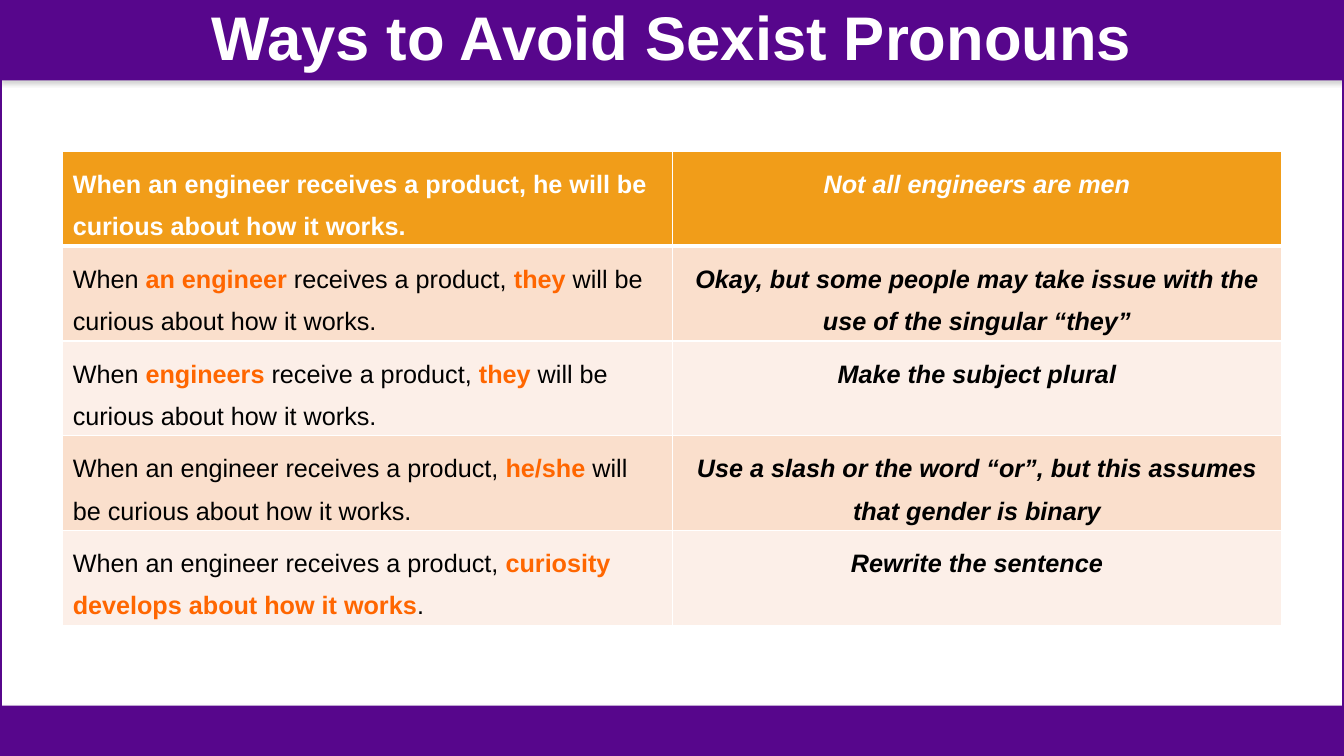
from lxml import etree
from pptx import Presentation
from pptx.dml.color import RGBColor
from pptx.enum.shapes import MSO_SHAPE
from pptx.enum.text import MSO_ANCHOR, PP_ALIGN
from pptx.oxml import parse_xml
from pptx.oxml.ns import nsdecls, qn
from pptx.util import Cm, Pt

RECTANGLE = MSO_SHAPE.RECTANGLE
MIDDLE = MSO_ANCHOR.MIDDLE
LEFT, CENTER = PP_ALIGN.LEFT, PP_ALIGN.CENTER

WIDTH, HEIGHT = 33.87, 19.05
BAND_HEIGHT = 2.03
FOOTER_HEIGHT = 1.27
TITLE_ONLY = 5

# Asterisks enclose the highlighted words.
ADVICE = [
    ("When an engineer receives a product, he will be curious about how it works.",
     "Not all engineers are men"),
    ("When *an engineer* receives a product, *they* will be curious about how it works.",
     "Okay, but some people may take issue with the use of the singular “they”"),
    ("When *engineers* receive a product, *they* will be curious about how it works.",
     "Make the subject plural"),
    ("When an engineer receives a product, *he/she* will be curious about how it works.",
     "Use a slash or the word “or”, but this assumes that gender is binary"),
    ("When an engineer receives a product, *curiosity develops about how it works*.",
     "Rewrite the sentence"),
]


def color(hex_code):
    return RGBColor.from_string(hex_code)


class Deck:
    FONT = "Arial"
    PURPLE, ORANGE, ACCENT = "57068C", "F19D19", "FF6600"
    BANDS = ("FCEFE8", "FADFCC")
    WHITE, BLACK = "FFFFFF", "000000"

    def __init__(self):
        self.presentation = Presentation()
        self.presentation.slide_width = Cm(WIDTH)
        self.presentation.slide_height = Cm(HEIGHT)
        layout = self.presentation.slide_layouts[TITLE_ONLY]
        self.slide = self.presentation.slides.add_slide(layout)

    def rectangle(self, top, height):
        box = self.slide.shapes.add_shape(RECTANGLE, 0, Cm(top), Cm(WIDTH), Cm(height))
        box.shadow.inherit = False
        return box

    def bar(self, top, height):
        """Add a full-width purple bar with a soft shadow below it."""
        bar = self.rectangle(top, height)
        bar.fill.solid()
        bar.fill.fore_color.rgb = color(self.PURPLE)
        bar.line.fill.background()
        effects = bar._element.spPr.find(qn("a:effectLst"))
        shadow = etree.SubElement(effects, qn("a:outerShdw"), blurRad=str(Pt(3.1)),
                                  dist=str(Pt(1.8)), dir="5400000", rotWithShape="0")
        tint = etree.SubElement(shadow, qn("a:srgbClr"), val="808080")
        etree.SubElement(tint, qn("a:alpha"), val="35000")

    def frame(self):
        frame = self.rectangle(0, HEIGHT)
        frame.fill.background()
        frame.line.color.rgb = color(self.PURPLE)
        frame.line.width = Pt(2.25)

    def run(self, paragraph, text, size, hex_code, bold=False, italic=False):
        run = paragraph.add_run()
        run.text = text
        run.font.name = self.FONT
        run.font.size = Pt(size)
        run.font.bold = bold
        run.font.italic = italic
        run.font.color.rgb = color(hex_code)

    def title(self, text):
        title = self.slide.shapes.title
        title.left, title.top = 0, 0
        title.width, title.height = Cm(WIDTH), Cm(BAND_HEIGHT)
        title.text_frame.vertical_anchor = MIDDLE
        title.text_frame.word_wrap = True
        heading = title.text_frame.paragraphs[0]
        heading.alignment = CENTER
        heading.line_spacing = 0.9
        self.run(heading, text, 44, self.WHITE, bold=True)
        self.slide.shapes._spTree.append(title._element)  # in front of the bars

    def borders(self, cell, top, bottom):
        properties = cell._tc.get_or_add_tcPr()
        for side, width in (("L", 1), ("R", 1), ("T", top), ("B", bottom)):
            properties.append(parse_xml(
                f'<a:ln{side} {nsdecls("a")} w="{Pt(width)}"><a:solidFill>'
                f'<a:srgbClr val="{self.WHITE}"/></a:solidFill></a:ln{side}>'))

    def table(self, rows, left, top, column_width, row_height):
        columns = len(rows[0])
        table = self.slide.shapes.add_table(
            len(rows), columns, Cm(left), Cm(top),
            Cm(column_width * columns), Cm(row_height * len(rows))).table
        for column in table.columns:
            column.width = Cm(column_width)
        for r, texts in enumerate(rows):
            header = r == 0
            plain = self.WHITE if header else self.BLACK
            for c, text in enumerate(texts):
                cell = table.cell(r, c)
                self.borders(cell, 3 if r == 1 else 1, 3 if header else 1)
                cell.fill.solid()
                cell.fill.fore_color.rgb = color(self.ORANGE if header else self.BANDS[r % 2])
                comment = c == 1
                paragraph = cell.text_frame.paragraphs[0]
                paragraph.alignment = CENTER if comment else LEFT
                paragraph.line_spacing = 1.5
                for i, piece in enumerate(text.split("*")):
                    marked = i % 2 == 1
                    self.run(paragraph, piece, 18, self.ACCENT if marked else plain,
                             bold=header or comment or marked, italic=comment)


def main():
    deck = Deck()
    deck.bar(0, BAND_HEIGHT)
    deck.frame()
    deck.bar(HEIGHT - FOOTER_HEIGHT, FOOTER_HEIGHT)
    deck.title("Ways to Avoid Sexist Pronouns")
    deck.table(ADVICE, left=1.58, top=3.82, column_width=15.36, row_height=2.38)
    deck.presentation.save("out.pptx")


if __name__ == "__main__":
    main()
